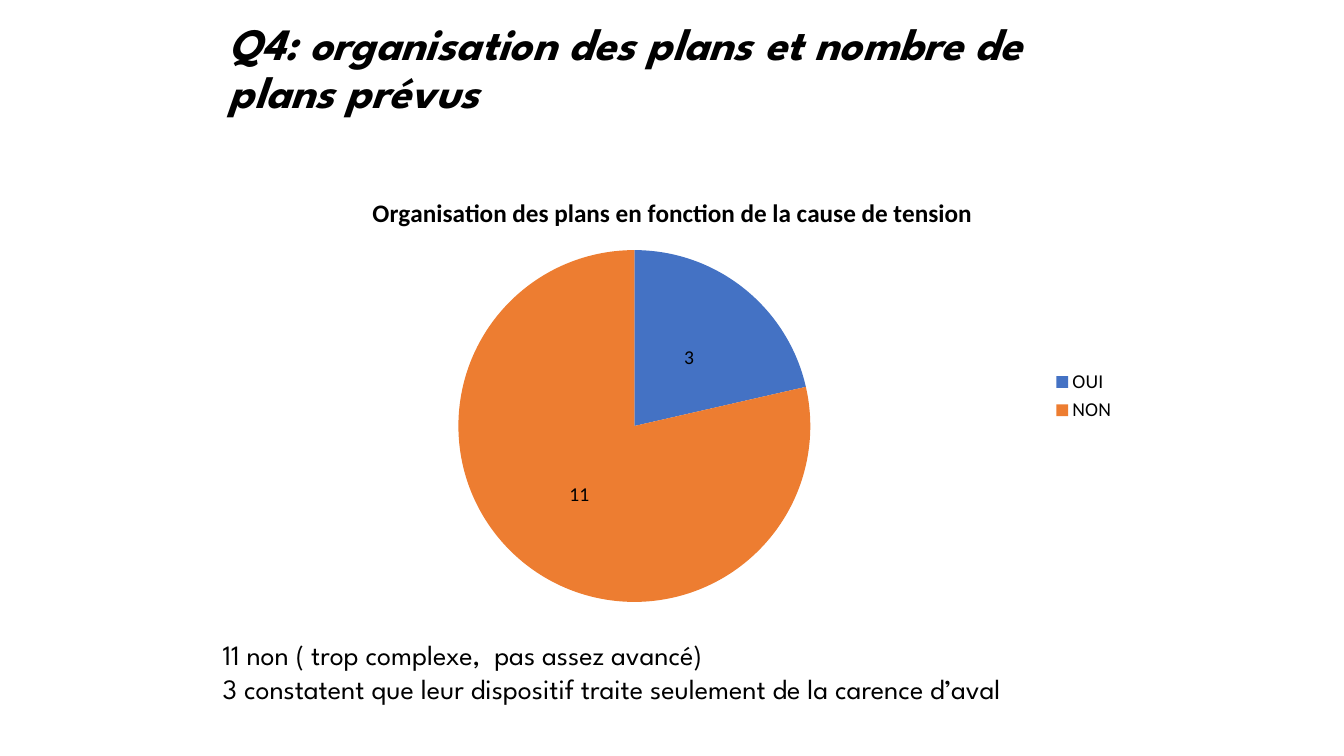
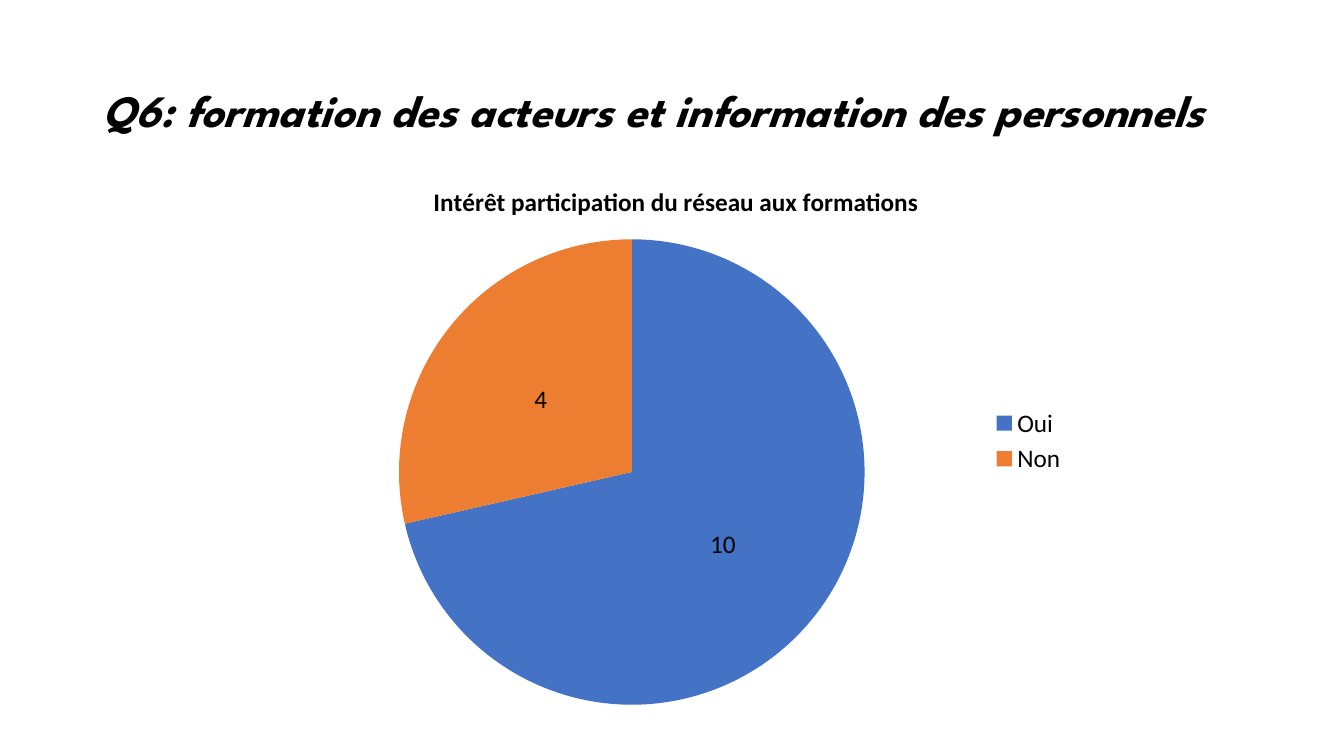
from pptx import Presentation
from pptx.chart.data import CategoryChartData
from pptx.dml.color import RGBColor
from pptx.enum.chart import XL_CHART_TYPE as ChartType
from pptx.enum.chart import XL_LABEL_POSITION as LabelPosition
from pptx.enum.chart import XL_LEGEND_POSITION as LegendPosition
from pptx.enum.text import MSO_ANCHOR as Anchor
from pptx.enum.text import PP_ALIGN as Align
from pptx.util import Inches, Pt

BLACK = RGBColor(0x00, 0x00, 0x00)
BLUE = RGBColor(0x44, 0x72, 0xC4)
ORANGE = RGBColor(0xED, 0x7D, 0x31)


class SurveyDeck:
    text_font = "League Spartan"
    chart_font = "Calibri"
    slice_colors = (BLUE, ORANGE)

    def __init__(self):
        self.presentation = Presentation()
        self.presentation.slide_width = Inches(13.33)
        self.presentation.slide_height = Inches(7.5)
        self.slide = None

    def add_slide(self):
        blank_layout = self.presentation.slide_layouts[6]
        self.slide = self.presentation.slides.add_slide(blank_layout)

    def style_font(self, font, name, size, bold=False, italic=False):
        font.name = name
        font.size = Pt(size)
        font.bold = bold
        font.italic = italic
        font.color.rgb = BLACK

    def add_text(self, lines, box, size, bold=False, italic=False,
                 anchor=Anchor.TOP, align=Align.LEFT, line_spacing=1.0):
        shape = self.slide.shapes.add_textbox(*map(Inches, box))
        text_frame = shape.text_frame
        text_frame.word_wrap = True
        text_frame.vertical_anchor = anchor
        text_frame.text = "\n".join(lines)
        for paragraph in text_frame.paragraphs:
            paragraph.alignment = align
            paragraph.line_spacing = line_spacing
            for run in paragraph.runs:
                self.style_font(run.font, self.text_font, size, bold, italic)

    def add_title(self, text, box):
        self.add_text([text], box, 32, bold=True, italic=True,
                      anchor=Anchor.MIDDLE, line_spacing=0.9)

    def add_comments(self, lines, box):
        self.add_text(lines, box, 20, align=Align.JUSTIFY)

    def add_pie(self, title, answers, box, size):
        data = CategoryChartData()
        data.categories = list(answers)
        data.add_series("Réponses", list(answers.values()))
        frame = self.slide.shapes.add_chart(
            ChartType.PIE, *map(Inches, box), data)
        chart = frame.chart
        self.style_font(chart.font, self.chart_font, 10)

        chart.has_title = True
        chart.chart_title.include_in_layout = False
        chart.chart_title.text_frame.text = title
        title_run = chart.chart_title.text_frame.paragraphs[0].runs[0]
        self.style_font(title_run.font, self.chart_font, 18, bold=True)

        chart.has_legend = True
        chart.legend.position = LegendPosition.RIGHT
        chart.legend.include_in_layout = False
        self.style_font(chart.legend.font, self.chart_font, size)

        plot = chart.plots[0]
        plot.vary_by_categories = True
        for index, color in enumerate(self.slice_colors):
            fill = plot.series[0].points[index].format.fill
            fill.solid()
            fill.fore_color.rgb = color

        plot.has_data_labels = True
        labels = plot.data_labels
        labels.show_value = True
        labels.show_percentage = False
        labels.position = LabelPosition.CENTER
        self.style_font(labels.font, self.chart_font, size)

    def save(self):
        self.presentation.save("out.pptx")


def main():
    deck = SurveyDeck()

    deck.add_slide()
    deck.add_title("Q4: organisation des plans et nombre de plans prévus",
                   (2.17, 0, 9, 1.39))
    deck.add_pie("Organisation des plans en fonction de la cause de tension",
                 {"OUI": 3, "NON": 11}, (2.17, 1.75, 9, 4.36), 14)
    deck.add_comments(
        ["11 non ( trop complexe,  pas assez avancé)",
         "3 constatent que leur dispositif traite seulement de la carence d’aval"],
        (2.11, 6.28, 9.58, 0.77))

    deck.add_slide()
    deck.add_title("Q6: formation des acteurs et information des personnels",
                   (0.92, 0.4, 11.5, 1.45))
    deck.add_pie("Intérêt participation du réseau aux formations",
                 {"Oui": 10, "Non": 4}, (2.73, 1.62, 7.95, 5.51), 18)

    deck.save()


if __name__ == "__main__":
    main()
